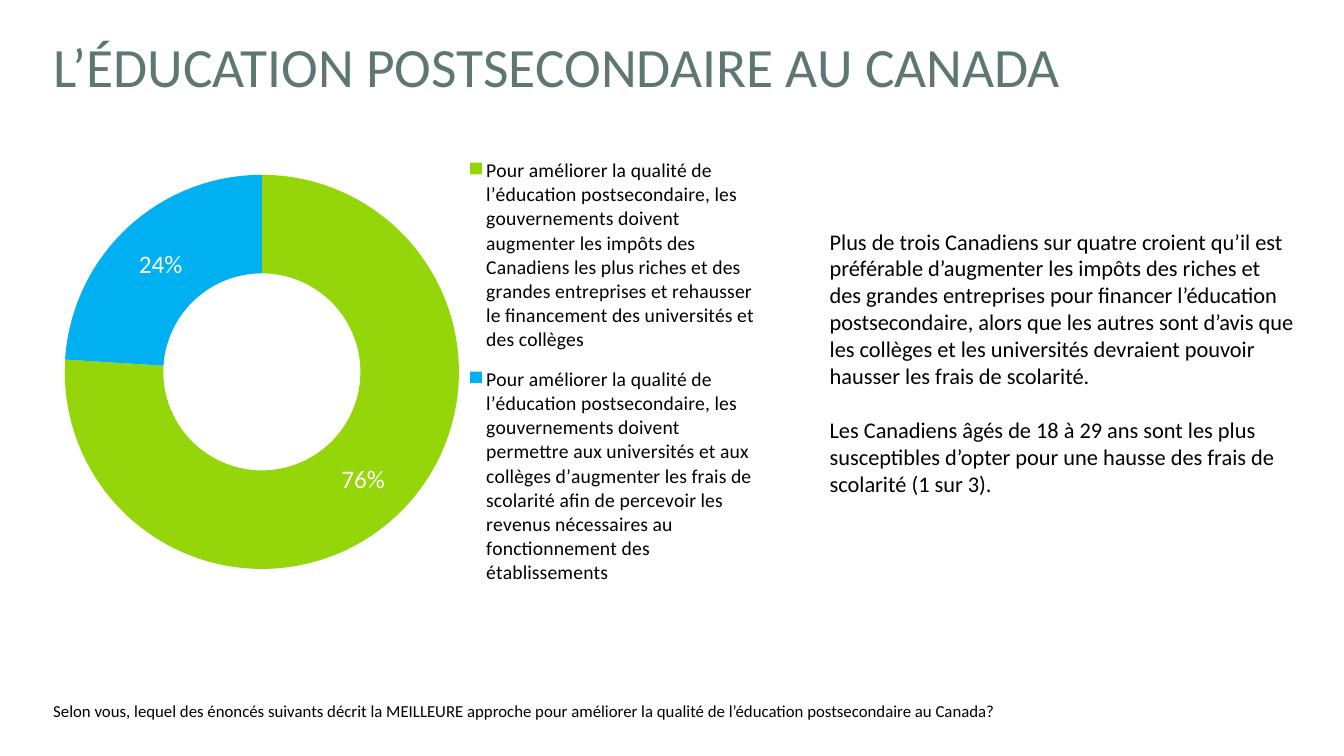
from dataclasses import dataclass

from lxml import etree
from pptx import Presentation
from pptx.chart.data import CategoryChartData
from pptx.dml.color import RGBColor
from pptx.enum.chart import XL_CHART_TYPE, XL_LEGEND_POSITION
from pptx.enum.text import MSO_ANCHOR
from pptx.oxml.ns import qn
from pptx.util import Inches, Pt

DOUGHNUT = XL_CHART_TYPE.DOUGHNUT
LEGEND_RIGHT = XL_LEGEND_POSITION.RIGHT
MIDDLE, TOP = MSO_ANCHOR.MIDDLE, MSO_ANCHOR.TOP


@dataclass(frozen=True)
class Theme:
    font: str = "Calibri"
    heading: RGBColor = RGBColor(0x5E, 0x77, 0x75)
    text: RGBColor = RGBColor(0, 0, 0)
    label: RGBColor = RGBColor(0xFF, 0xFF, 0xFF)
    slices: tuple = (RGBColor(0x94, 0xD6, 0x0A), RGBColor(0x00, 0xB0, 0xF0))
    title_size: float = 39.6
    label_size: float = 18
    body_size: float = 16
    legend_size: float = 14
    question_size: float = 12


THEME = Theme()

TITLE = "L’ÉDUCATION POSTSECONDAIRE AU CANADA"
QUESTION = (
    "Selon vous, lequel des énoncés suivants décrit la MEILLEURE approche pour "
    "améliorer la qualité de l’éducation postsecondaire au Canada?"
)
FINDINGS = (
    "Plus de trois Canadiens sur quatre croient qu’il est préférable d’augmenter "
    "les impôts des riches et des grandes entreprises pour financer l’éducation "
    "postsecondaire, alors que les autres sont d’avis que les collèges et les "
    "universités devraient pouvoir hausser les frais de scolarité.",
    "Les Canadiens âgés de 18 à 29 ans sont les plus susceptibles d’opter pour "
    "une hausse des frais de scolarité (1 sur 3).",
)
GOAL = "Pour améliorer la qualité de l’éducation postsecondaire, les gouvernements doivent "
OPINIONS = {
    GOAL + "augmenter les impôts des Canadiens les plus riches et des grandes "
    "entreprises et rehausser le financement des universités et des collèges": 76,
    GOAL + "permettre aux universités et aux collèges d’augmenter les frais de "
    "scolarité afin de percevoir les revenus nécessaires au fonctionnement des "
    "établissements": 24,
}


def style_font(font, size, color=THEME.text):
    font.name = THEME.font
    font.size = Pt(size)
    font.color.rgb = color


def add_text(slide, box, texts, size, color=THEME.text, anchor=TOP, spacing=1.0, gap=0):
    """Add one paragraph per text, with gap points between paragraphs."""
    frame = slide.shapes.add_textbox(*map(Inches, box)).text_frame
    frame.word_wrap = True
    frame.vertical_anchor = anchor
    for index, text in enumerate(texts):
        paragraph = frame.add_paragraph() if index else frame.paragraphs[0]
        paragraph.line_spacing = spacing
        if index:
            paragraph.space_before = Pt(gap)
        run = paragraph.add_run()
        run.text = text
        style_font(run.font, size, color)


def place_part(part, position, x, y, w, h, inner=False):
    """Fix a chart part at fractions of the chart's frame."""
    layout = part.find(qn("c:layout"))
    if layout is None:
        layout = etree.Element(qn("c:layout"))
        part.insert(position, layout)
    for child in list(layout):
        layout.remove(child)
    manual = etree.SubElement(layout, qn("c:manualLayout"))
    settings = [("layoutTarget", "inner")] if inner else []
    settings += [("xMode", "edge"), ("yMode", "edge")]
    settings += [("x", x), ("y", y), ("w", w), ("h", h)]
    for tag, value in settings:
        etree.SubElement(manual, qn(f"c:{tag}")).set("val", str(value))


def add_opinion_chart(slide, box):
    opinions = CategoryChartData(number_format="0")
    opinions.categories = list(OPINIONS)
    opinions.add_series("Series 1", list(OPINIONS.values()))
    chart = slide.shapes.add_chart(DOUGHNUT, *map(Inches, box), opinions).chart
    style_font(chart.font, THEME.label_size)
    chart.has_title = False

    chart.has_legend = True
    legend = chart.legend
    legend.position = LEGEND_RIGHT
    legend.include_in_layout = False
    style_font(legend.font, THEME.legend_size)

    plot = chart.plots[0]
    plot.vary_by_categories = True
    for index, color in enumerate(THEME.slices):
        fill = plot.series[0].points[index].format.fill
        fill.solid()
        fill.fore_color.rgb = color
    plot.has_data_labels = True
    labels = plot.data_labels
    labels.show_percentage = True
    labels.show_value = False
    labels.number_format = "0%"
    labels.number_format_is_linked = False
    style_font(labels.font, THEME.label_size, THEME.label)

    plot_area = chart.element.find(".//" + qn("c:plotArea"))
    legend_part = chart.element.find(".//" + qn("c:legend"))
    place_part(plot_area, 0, 0.02, 0.12, 0.55, 0.76, inner=True)
    place_part(legend_part, 1, 0.6, 0.06, 0.4, 0.88)


def main():
    deck = Presentation()
    deck.slide_width, deck.slide_height = Inches(13.33), Inches(7.5)
    slide = deck.slides.add_slide(deck.slide_layouts[6])
    add_text(slide, (0.43, 0.18, 12.72, 1.02), [TITLE], THEME.title_size,
             THEME.heading, MIDDLE, spacing=0.9)
    add_text(slide, (0.43, 6.7, 9.97, 0.73), [QUESTION], THEME.question_size,
             anchor=MIDDLE, spacing=0.9)
    add_opinion_chart(slide, (0.5, 1.11, 7.11, 5.16))
    add_text(slide, (8.13, 2.21, 4.81, 3.06), FINDINGS, THEME.body_size, gap=19.5)
    deck.save("out.pptx")


if __name__ == "__main__":
    main()
